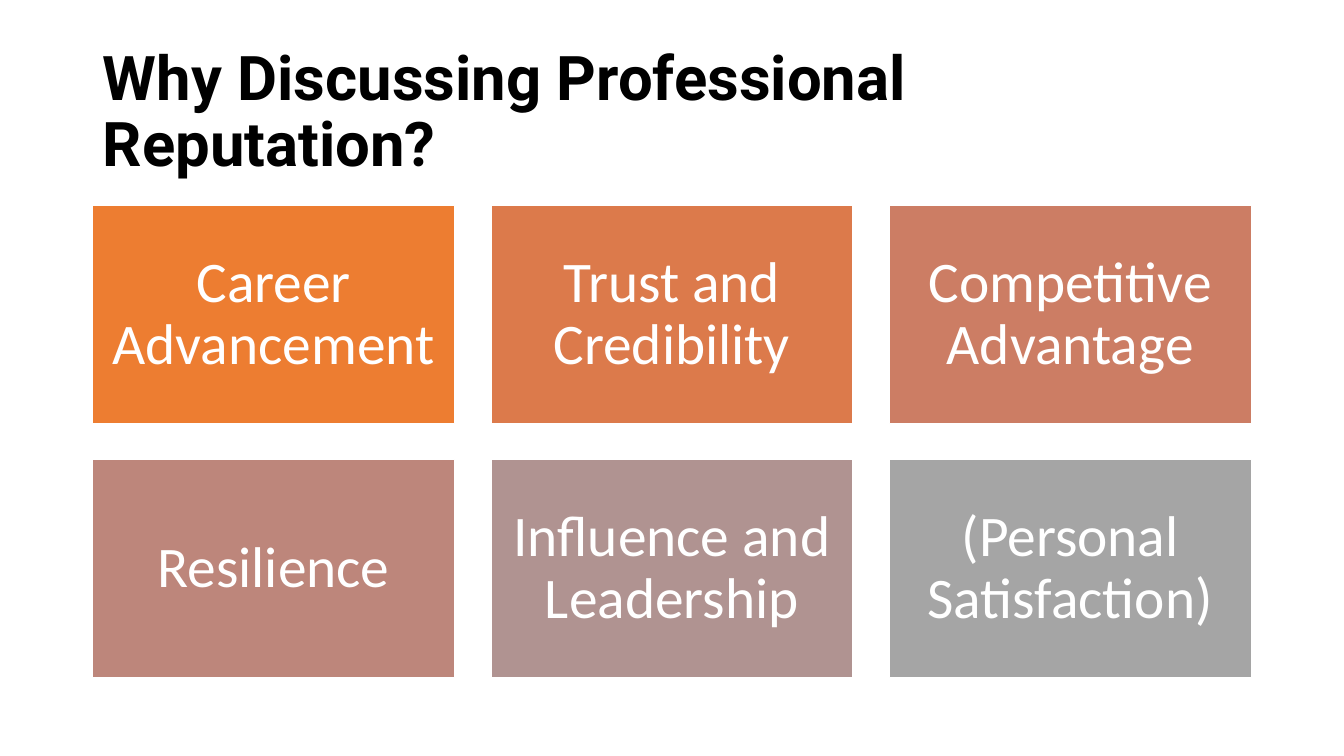
from pptx import Presentation
from pptx.dml.color import RGBColor
from pptx.enum.shapes import MSO_SHAPE
from pptx.enum.text import MSO_ANCHOR, MSO_AUTO_SIZE, PP_ALIGN
from pptx.util import Inches, Pt

RECTANGLE = MSO_SHAPE.RECTANGLE
MIDDLE = MSO_ANCHOR.MIDDLE
NO_AUTOFIT = MSO_AUTO_SIZE.NONE
LEFT, CENTER = PP_ALIGN.LEFT, PP_ALIGN.CENTER

COLORS = {
    "black": "000000",
    "white": "FFFFFF",
    "orange": "ED7D31",
    "copper": "DC7A4B",
    "coral": "CC7D64",
    "rose": "BD867B",
    "mauve": "B09391",
    "gray": "A5A5A5",
}

REASONS = [
    ("Career Advancement", "orange"),
    ("Trust and Credibility", "copper"),
    ("Competitive Advantage", "coral"),
    ("Resilience", "rose"),
    ("Influence and Leadership", "mauve"),
    ("(Personal Satisfaction)", "gray"),
]


def color(name):
    return RGBColor.from_string(COLORS[name])


def write(frame, text, *, font, size, ink, align, bold=False, inset=None):
    """Fill a text frame with one formatted paragraph."""
    frame.word_wrap = True
    frame.auto_size = NO_AUTOFIT
    frame.vertical_anchor = MIDDLE
    if inset is not None:
        frame.margin_left = frame.margin_right = Inches(inset)
        frame.margin_top = frame.margin_bottom = Inches(inset)
    paragraph = frame.paragraphs[0]
    paragraph.alignment = align
    paragraph.line_spacing = 0.9
    run = paragraph.add_run()
    run.text = text
    run.font.name = font
    run.font.size = Pt(size)
    run.font.bold = bold
    run.font.color.rgb = color(ink)


class ReasonSlide:
    """Style and grid of the slide, in inches."""

    COLUMNS = 3
    GRID_LEFT, GRID_TOP = 0.92, 2.04
    TILE_WIDTH, TILE_HEIGHT = 3.59, 2.16
    GAP = 0.36

    def __init__(self, deck):
        self.slide = deck.slides.add_slide(deck.slide_layouts[5])

    def heading(self, text):
        title = self.slide.shapes.title
        title.left, title.top = Inches(self.GRID_LEFT), Inches(0.4)
        title.width, title.height = Inches(11.5), Inches(1.45)
        write(title.text_frame, text, font="Roboto", size=44, ink="black",
              align=LEFT, bold=True)

    def tile(self, index, text, fill):
        row, column = divmod(index, self.COLUMNS)
        tile = self.slide.shapes.add_shape(
            RECTANGLE,
            Inches(self.GRID_LEFT + column * (self.TILE_WIDTH + self.GAP)),
            Inches(self.GRID_TOP + row * (self.TILE_HEIGHT + self.GAP)),
            Inches(self.TILE_WIDTH), Inches(self.TILE_HEIGHT))
        tile.shadow.inherit = False
        tile.fill.solid()
        tile.fill.fore_color.rgb = color(fill)
        tile.line.color.rgb = color("white")
        tile.line.width = Pt(1)
        write(tile.text_frame, text, font="Calibri", size=41, ink="white",
              align=CENTER, inset=0.17)


def main():
    deck = Presentation()
    deck.slide_width, deck.slide_height = Inches(13.33), Inches(7.5)

    # Title
    page = ReasonSlide(deck)
    page.heading("Why Discussing Professional Reputation?")

    # Grid of reasons
    for index, (reason, fill) in enumerate(REASONS):
        page.tile(index, reason, fill)

    deck.save("out.pptx")


if __name__ == "__main__":
    main()
